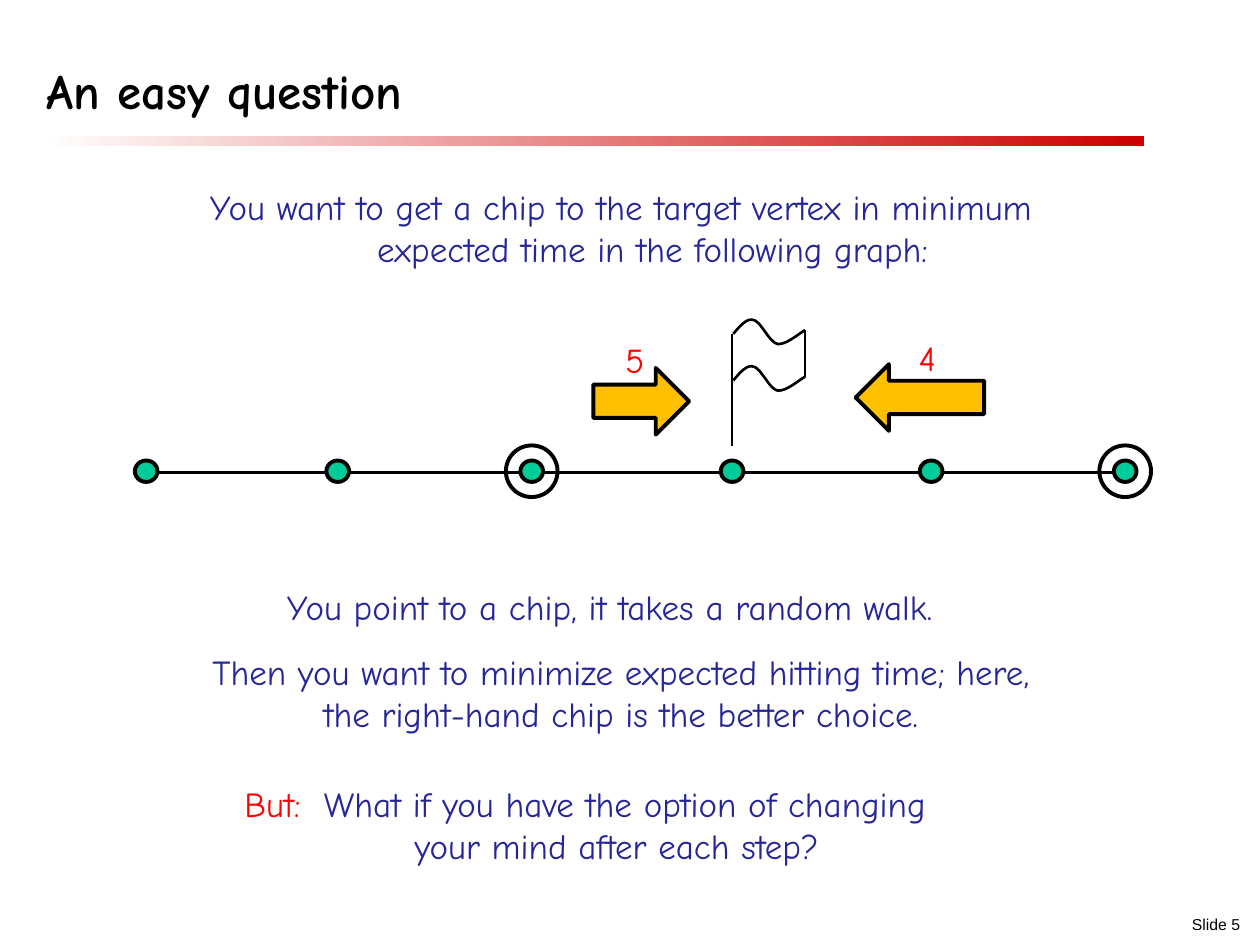
from dataclasses import dataclass

from lxml.etree import SubElement
from pptx import Presentation
from pptx.dml.color import RGBColor
from pptx.enum.shapes import MSO_CONNECTOR, MSO_SHAPE
from pptx.enum.text import MSO_ANCHOR, PP_ALIGN
from pptx.oxml.ns import qn
from pptx.util import Inches, Pt


@dataclass(frozen=True)
class Theme:
    black: RGBColor = RGBColor(0x00, 0x00, 0x00)
    white: RGBColor = RGBColor(0xFF, 0xFF, 0xFF)
    rule: RGBColor = RGBColor(0xCC, 0x00, 0x00)
    body: RGBColor = RGBColor(0x26, 0x26, 0x99)
    accent: RGBColor = RGBColor(0xFF, 0x00, 0x00)
    vertex: RGBColor = RGBColor(0x00, 0xCC, 0x99)
    arrow: RGBColor = RGBColor(0xFF, 0xC0, 0x00)
    font: str = "Comic Neue"
    footer_font: str = "Arial"
    title_size: int = 28
    body_size: int = 20
    footer_size: int = 9
    line: float = 2.25
    flag_line: float = 1.5


@dataclass(frozen=True)
class Area:
    left: float
    top: float
    width: float
    height: float

    def lengths(self) -> list:
        return [Inches(n) for n in (self.left, self.top, self.width, self.height)]


@dataclass(frozen=True)
class Span:
    text: str
    color: RGBColor


@dataclass(frozen=True)
class TextBlock:
    area: Area
    paragraphs: list


@dataclass(frozen=True)
class Arrow:
    kind: MSO_SHAPE
    area: Area


THEME = Theme()

# Graph geometry
PATH_Y = 3.75
VERTEX_X = [1.16, 2.68, 4.22, 5.81, 7.39, 8.93]
CHIP_X = [VERTEX_X[2], VERTEX_X[5]]
VERTEX_SIZE = (0.18, 0.17)
CHIP_SIZE = (0.41, 0.41)

# Flag geometry: each edge is the same wave, made of three cubic curves
FLAG_LEFT, FLAG_RIGHT, FLAG_DROP = 5.82, 6.39, 0.37
WAVE_START = (5.82, 2.65)
WAVE_CURVES = [
    ((5.87, 2.59), (5.93, 2.52), (5.98, 2.54)),
    ((6.04, 2.55), (6.10, 2.71), (6.17, 2.73)),
    ((6.24, 2.74), (6.35, 2.64), (6.39, 2.62)),
]

TEXT_BLOCKS = [
    TextBlock(Area(1.27, 1.42, 7.32, 0.77), [[Span(
        "You want to get a chip to the target vertex in minimum "
        "expected time in the following graph:", THEME.body)]]),
    TextBlock(Area(1.18, 4.59, 7.32, 0.44), [[Span(
        "You point to a chip, it takes a random walk.", THEME.body)]]),
    TextBlock(Area(1.18, 5.11, 7.5, 0.77), [
        [Span("Then you want to minimize expected hitting time; here,", THEME.body)],
        [Span("the right-hand chip is the better choice.", THEME.body)]]),
    TextBlock(Area(1.8, 6.16, 5.69, 0.77), [[
        Span("But:  ", THEME.accent),
        Span("What if you have the option of changing "
             "your mind after each step?", THEME.body)]]),
    TextBlock(Area(4.71, 2.63, 0.66, 0.44), [[Span("5", THEME.accent)]]),
    TextBlock(Area(7.03, 2.62, 0.66, 0.44), [[Span("4", THEME.accent)]]),
]

ARROWS = [
    Arrow(MSO_SHAPE.RIGHT_ARROW, Area(4.71, 2.92, 0.76, 0.53)),
    Arrow(MSO_SHAPE.LEFT_ARROW, Area(6.79, 2.89, 1.02, 0.53)),
]


def style_outline(shape, width: float) -> None:
    shape.line.color.rgb = THEME.black
    shape.line.width = Pt(width)


def add_shape(page, kind: MSO_SHAPE, area: Area, color: RGBColor | None = None):
    shape = page.shapes.add_shape(kind, *area.lengths())
    shape.shadow.inherit = False
    if color is None:
        shape.fill.background()
    else:
        shape.fill.solid()
        shape.fill.fore_color.rgb = color
    style_outline(shape, THEME.line)
    return shape


def add_circle(page, x: float, size: tuple, color: RGBColor | None = None) -> None:
    width, height = size
    area = Area(x - width / 2, PATH_Y - 0.01 - height / 2, width, height)
    add_shape(page, MSO_SHAPE.OVAL, area, color)


def add_line(page, start: tuple, end: tuple, width: float) -> None:
    line = page.shapes.add_connector(
        MSO_CONNECTOR.STRAIGHT, *[Inches(n) for n in (*start, *end)])
    style_outline(line, width)
    SubElement(line._element.spPr, qn("a:effectLst"))


def wave_points(steps: int = 12) -> list:
    points, start = [WAVE_START], WAVE_START
    for first, second, end in WAVE_CURVES:
        for step in range(1, steps + 1):
            t = step / steps
            u = 1 - t
            points.append(tuple(
                u**3 * a + 3 * u * u * t * b + 3 * u * t * t * c + t**3 * d
                for a, b, c, d in zip(start, first, second, end)))
        start = end
    return points


def add_wave(page, drop: float) -> None:
    points = [(Inches(x), Inches(y + drop)) for x, y in wave_points()]
    builder = page.shapes.build_freeform(*points[0])
    builder.add_line_segments(points[1:], close=False)
    wave = builder.convert_to_shape()
    wave.shadow.inherit = False
    wave.fill.background()
    style_outline(wave, THEME.flag_line)


def add_text(page, block: TextBlock) -> None:
    frame = page.shapes.add_textbox(*block.area.lengths()).text_frame
    frame.word_wrap = True
    frame.vertical_anchor = MSO_ANCHOR.MIDDLE
    for index, spans in enumerate(block.paragraphs):
        para = frame.add_paragraph() if index else frame.paragraphs[0]
        para.alignment = PP_ALIGN.CENTER
        para.font.name, para.font.size = THEME.font, Pt(THEME.body_size)
        # Hanging indent
        properties = para._p.get_or_add_pPr()
        properties.set("marL", str(Inches(0.5)))
        properties.set("indent", str(Inches(-0.5)))
        for span in spans:
            run = para.add_run()
            run.text = span.text
            run.font.color.rgb = span.color


def add_title(page) -> None:
    title = page.shapes.title
    title.left, title.top, title.width, title.height = Area(0.27, 0.27, 9.31, 0.73).lengths()
    title.text_frame.text = "An easy question"
    title.text_frame.vertical_anchor = MSO_ANCHOR.BOTTOM
    para = title.text_frame.paragraphs[0]
    para.alignment, para.line_spacing = PP_ALIGN.LEFT, 0.85
    para.font.name, para.font.size = THEME.font, Pt(THEME.title_size)
    para.font.bold, para.font.color.rgb = True, THEME.black


def add_rule(page) -> None:
    rule = add_shape(page, MSO_SHAPE.ROUNDED_RECTANGLE, Area(0.33, 1.08, 8.75, 0.08))
    rule.adjustments[0] = 0.02
    rule.line.fill.background()
    rule.fill.gradient()
    rule.fill.gradient_angle = 180
    for stop, color in zip(rule.fill.gradient_stops, (THEME.rule, THEME.white)):
        stop.color.rgb = color


def add_footer(page) -> None:
    frame = page.shapes.add_textbox(*Area(7.86, 7.22, 2.08, 0.24).lengths()).text_frame
    frame.word_wrap = True
    frame.vertical_anchor = MSO_ANCHOR.MIDDLE
    para = frame.paragraphs[0]
    para.text = "Slide 5"
    para.alignment, para.line_spacing = PP_ALIGN.RIGHT, 0.93
    para.font.name, para.font.size = THEME.footer_font, Pt(THEME.footer_size)
    para.font.color.rgb = THEME.black


def main() -> None:
    deck = Presentation()
    deck.slide_width, deck.slide_height = Inches(10), Inches(7.5)
    page = deck.slides.add_slide(deck.slide_layouts[5])  # title only

    # Frame of the page
    add_footer(page)
    add_rule(page)
    add_title(page)

    # Path graph, with rings around the two chips
    add_line(page, (1.12, PATH_Y), (8.95, PATH_Y), THEME.line)
    for x in VERTEX_X:
        add_circle(page, x, VERTEX_SIZE, THEME.vertex)
    for x in CHIP_X:
        add_circle(page, x, CHIP_SIZE)

    # Flag on the target vertex
    add_line(page, (5.81, 3.54), (5.81, 2.65), THEME.flag_line)
    for drop in (0, FLAG_DROP):
        add_wave(page, drop)
    add_line(page, (FLAG_RIGHT, 2.62), (FLAG_RIGHT, 2.62 + FLAG_DROP), THEME.flag_line)

    # Arrows and wording
    for arrow in ARROWS:
        add_shape(page, arrow.kind, arrow.area, THEME.arrow)
    for block in TEXT_BLOCKS:
        add_text(page, block)

    deck.save("out.pptx")


if __name__ == "__main__":
    main()
